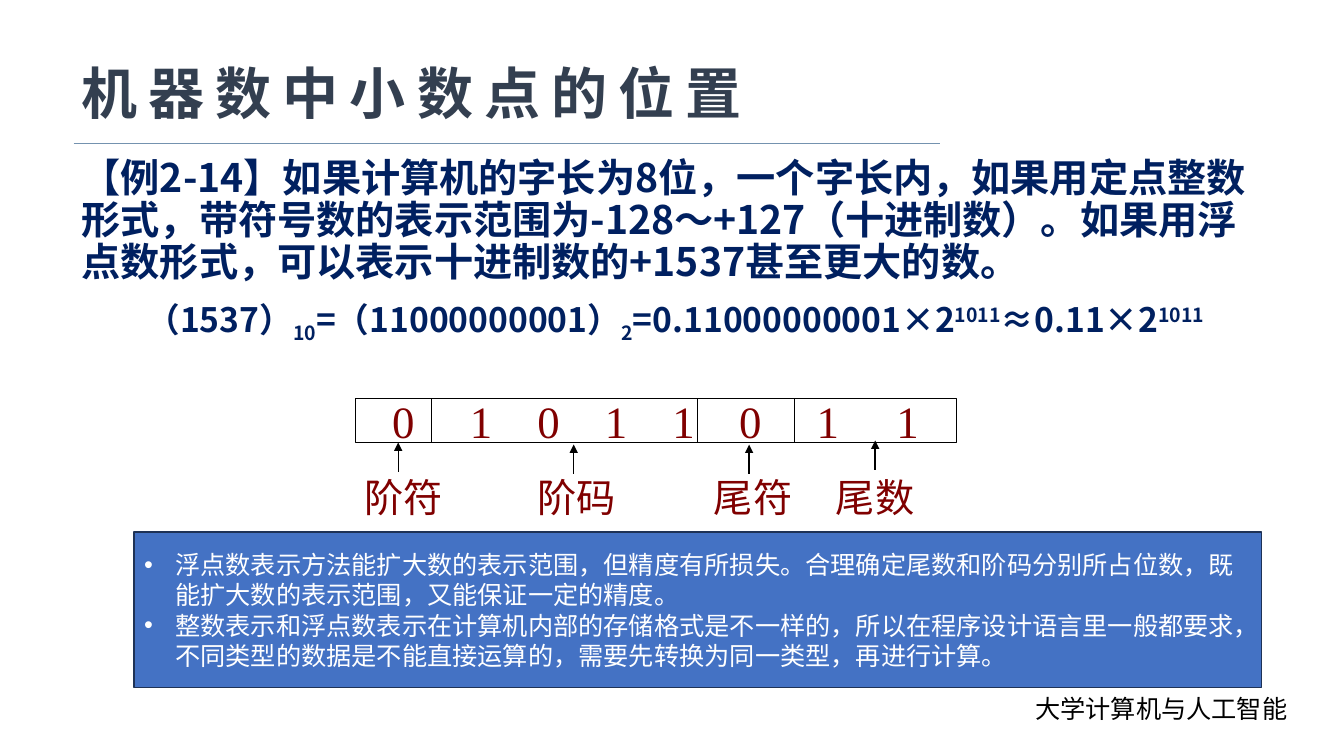
from lxml import etree
from pptx import Presentation
from pptx.dml.color import RGBColor
from pptx.enum import shapes, text
from pptx.oxml import ns
from pptx.util import Inches, Pt

SLATE = RGBColor(0x33, 0x3F, 0x50)
NAVY = RGBColor(0x00, 0x20, 0x60)
MAROON = RGBColor(0x80, 0x00, 0x00)
BLUE = RGBColor(0x44, 0x72, 0xC4)
DARK_BLUE = RGBColor(0x1E, 0x32, 0x56)
RULE = RGBColor(0x74, 0x92, 0xAF)
BLACK = RGBColor(0, 0, 0)
WHITE = RGBColor(0xFF, 0xFF, 0xFF)
SANS = "Noto Sans CJK SC"
SERIF = "Times New Roman"


def add_element(parent, tag, **attributes):
    return etree.SubElement(parent, ns.qn(tag), attributes)


def style(para, size, color, face=SANS, bold=False, align=text.PP_ALIGN.LEFT):
    para.alignment = align
    font = para.font
    font.size, font.bold, font.name = Pt(size), bold, face
    font.color.rgb = color
    add_element(font._element, "a:ea", typeface=SANS)


def place(shape, left, top, width, height):
    shape.left, shape.top = Inches(left), Inches(top)
    shape.width, shape.height = Inches(width), Inches(height)


def set_frame(shape, anchor, inset=None):
    frame = shape.text_frame
    frame.word_wrap = True
    frame.auto_size = text.MSO_AUTO_SIZE.NONE
    frame.vertical_anchor = anchor
    if inset is not None:
        frame.margin_left = frame.margin_right = Inches(inset)
        frame.margin_top = frame.margin_bottom = Inches(inset)
    return frame


def add_line(page, x1, y1, x2, y2, color, width, arrow=False):
    line = page.shapes.add_connector(
        shapes.MSO_CONNECTOR.STRAIGHT, Inches(x1), Inches(y1), Inches(x2), Inches(y2))
    line.line.color.rgb = color
    line.line.width = Pt(width)
    if arrow:
        add_element(line.line._get_or_add_ln(), "a:tailEnd", type="triangle")
    add_element(line._element.spPr, "a:effectLst")


def add_panel(page, left, top, width, height, fill, border, weight):
    panel = page.shapes.add_shape(
        shapes.MSO_SHAPE.RECTANGLE, Inches(left), Inches(top), Inches(width), Inches(height))
    panel.shadow.inherit = False
    panel.fill.solid()
    panel.fill.fore_color.rgb = fill
    panel.line.color.rgb = border
    panel.line.width = Pt(weight)
    return panel


def add_title(page, left, top, width, height):
    title = page.shapes.title
    place(title, left, top, width, height)
    para = set_frame(title, text.MSO_ANCHOR.MIDDLE).paragraphs[0]
    para.text = "机器数中小数点的位置"
    para.line_spacing = 0.9
    style(para, 40, SLATE, bold=True)
    para.font._element.set("spc", "800")
    rule_top = top + height + 0.01
    add_line(page, left + 0.02, rule_top, left + 8.61, rule_top, RULE, 0.5)


def add_example(page, left, top, width, height):
    body = page.placeholders[1]
    place(body, left, top, width, height)
    frame = set_frame(body, text.MSO_ANCHOR.TOP)
    example, formula = frame.paragraphs[0], frame.add_paragraph()
    example.text = ("【例2-14】如果计算机的字长为8位，一个字长内，如果用定点整数形式，"
                    "带符号数的表示范围为-128～+127（十进制数）。如果用浮点数形式，"
                    "可以表示十进制数的+1537甚至更大的数。")
    pieces = [("（1537）", 0), ("10", -25), ("=（11000000001）", 0), ("2", -25),
              ("=0.11000000001×2", 0), ("1011", 30), ("≈0.11×2", 0), ("1011", 30)]
    for words, baseline in pieces:
        span = formula.add_run()
        span.text = words
        if baseline:
            span.font._element.set("baseline", str(baseline * 1000))
    for para, size, before, align in ((example, 28, 0, text.PP_ALIGN.LEFT),
                                      (formula, 24, 10, text.PP_ALIGN.CENTER)):
        para.line_spacing = 0.9
        para.space_before = Pt(before)
        properties = para._p.get_or_add_pPr()
        properties.set("marL", "0")
        properties.set("indent", "0")
        add_element(properties, "a:buNone")
        style(para, size, NAVY, bold=True, align=align)


def add_register(page, left, top, width, height):
    register = add_panel(page, left, top, width, height, WHITE, BLACK, 0.75)
    para = set_frame(register, text.MSO_ANCHOR.MIDDLE, 0).paragraphs[0]
    para.text = "".join("\t" + bit for bit in "01011011")
    stops = add_element(para._p.get_or_add_pPr(), "a:tabLst")
    for stop in (0.36, 1.13, 1.8, 2.47, 3.14, 3.8, 4.57, 5.36):
        add_element(stops, "a:tab", pos=str(Inches(stop)), algn="l")
    style(para, 32, MAROON, SERIF)

    bottom = top + height
    for offset in (0.75, 3.39, 4.35):
        add_line(page, left + offset, top, left + offset, bottom, BLACK, 0.75)

    fields = [("阶符", 0.47, 0.42, 0), ("阶码", 2.19, 2.16, 0.02),
              ("尾符", 3.94, 3.9, 0.02), ("尾数", 5.15, 5.15, -0.02)]
    for name, center, arrow, drop in fields:
        label = page.shapes.add_textbox(
            Inches(left + center - 0.57), Inches(bottom + 0.32), Inches(1.14), Inches(0.44))
        para = set_frame(label, text.MSO_ANCHOR.MIDDLE, 0).paragraphs[0]
        para.text = name
        style(para, 28, MAROON, SERIF, align=text.PP_ALIGN.CENTER)
        tip = bottom + drop
        add_line(page, left + arrow, tip + 0.29, left + arrow, tip, BLACK, 1, arrow=True)


def add_notes_panel(page, left, top, width, height):
    panel = add_panel(page, left, top, width, height, BLUE, DARK_BLUE, 1)
    frame = set_frame(panel, text.MSO_ANCHOR.MIDDLE)
    points = [
        "浮点数表示方法能扩大数的表示范围，但精度有所损失。合理确定尾数和阶码分别所占位数，"
        "既能扩大数的表示范围，又能保证一定的精度。",
        "整数表示和浮点数表示在计算机内部的存储格式是不一样的，所以在程序设计语言里一般都要求，"
        "不同类型的数据是不能直接运算的，需要先转换为同一类型，再进行计算。"]
    for index, point in enumerate(points):
        para = frame.add_paragraph() if index else frame.paragraphs[0]
        para.text = point
        properties = para._p.get_or_add_pPr()
        properties.set("marL", str(Inches(0.31)))
        properties.set("indent", str(-Inches(0.31)))
        add_element(properties, "a:buFont", typeface="Arial")
        add_element(properties, "a:buChar", char="•")
        style(para, 18, WHITE)


def add_course_name(page, left, top, width, height):
    box = page.shapes.add_textbox(Inches(left), Inches(top), Inches(width), Inches(height))
    frame = box.text_frame
    frame.word_wrap = False
    frame.auto_size = text.MSO_AUTO_SIZE.SHAPE_TO_FIT_TEXT
    para = frame.paragraphs[0]
    para.text = "大学计算机与人工智能"
    style(para, 18, BLACK)


def main():
    deck = Presentation()
    deck.slide_width, deck.slide_height = Inches(13.33), Inches(7.5)
    page = deck.slides.add_slide(deck.slide_layouts[1])
    add_title(page, 0.71, 0.5, 11.5, 0.91)
    add_example(page, 0.71, 1.52, 11.98, 5.13)
    add_register(page, 3.53, 3.95, 5.96, 0.44)
    add_notes_panel(page, 1.33, 5.28, 11.18, 1.54)
    add_course_name(page, 10.17, 6.83, 2.73, 0.4)
    deck.save("out.pptx")


if __name__ == "__main__":
    main()
